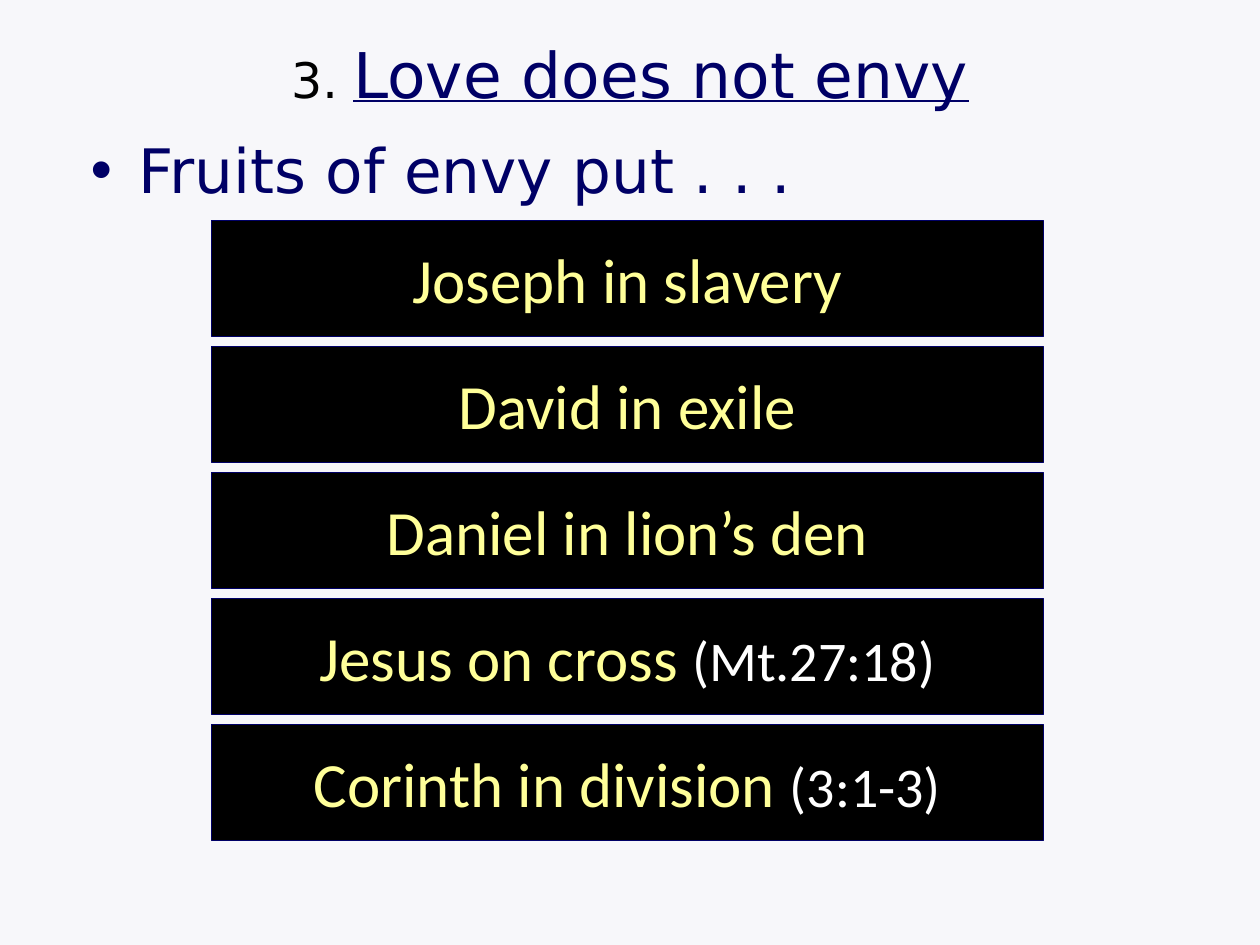
from lxml import etree
from pptx import Presentation
from pptx.dml.color import RGBColor
from pptx.enum.shapes import MSO_SHAPE
from pptx.enum.text import MSO_ANCHOR, PP_ALIGN
from pptx.oxml.ns import qn
from pptx.util import Inches, Pt

RECT = MSO_SHAPE.RECTANGLE
MIDDLE = MSO_ANCHOR.MIDDLE
CENTER, LEFT = PP_ALIGN.CENTER, PP_ALIGN.LEFT

COLORS = {"back": "F7F7FA", "navy": "000066", "black": "000000",
          "yellow": "FFFF99", "white": "FFFFFF"}
HEAD, BODY = "DejaVu Sans", "Calibri"

# Bars: one row per inch
BAR_X, BAR_Y, BAR_W, BAR_H, STEP = 1.68, 1.75, 6.6, 0.92, 1
FRUITS = [
    ("Joseph in slavery", ""),
    ("David in exile", ""),
    ("Daniel in lion’s den", ""),
    ("Jesus on cross ", "(Mt.27:18)"),
    ("Corinth in division ", "(3:1-3)"),
]


def color(name):
    return RGBColor.from_string(COLORS[name])


def add_run(para, text, size, face, tint, under=None):
    run = para.add_run()
    run.text = text
    font = run.font
    font.size, font.name, font.underline = Pt(size), face, under
    font.color.rgb = color(tint)


def set_title(slide):
    title = slide.shapes.title
    title.left, title.top = Inches(0.75), Inches(0.08)
    title.width, title.height = Inches(8.5), Inches(1)
    frame = title.text_frame
    frame.vertical_anchor = MIDDLE
    para = frame.paragraphs[0]
    para.alignment = CENTER
    add_run(para, "3. ", 28, HEAD, "black")
    add_run(para, "Love does not envy", 36, HEAD, "navy", True)


def add_point(slide, text):
    box = slide.shapes.add_textbox(Inches(0.62), Inches(1),
                                   Inches(8.75), Inches(6.08))
    frame = box.text_frame
    frame.word_wrap = True
    para = frame.paragraphs[0]
    para.alignment = LEFT
    para.space_after = Pt(12)
    # Hanging bullet
    props = para._p.get_or_add_pPr()
    props.set("marL", str(Inches(0.38)))
    props.set("indent", str(-Inches(0.38)))
    etree.SubElement(props, qn("a:buFont")).set("typeface", "Arial")
    etree.SubElement(props, qn("a:buChar")).set("char", "•")
    add_run(para, text, 35, HEAD, "navy")


def add_bar(slide, row, text, verse):
    bar = slide.shapes.add_shape(RECT, Inches(BAR_X), Inches(BAR_Y + row * STEP),
                                 Inches(BAR_W), Inches(BAR_H))
    bar.shadow.inherit = False
    bar.fill.solid()
    bar.fill.fore_color.rgb = color("black")
    bar.line.color.rgb = color("navy")
    bar.line.width = Pt(0.25)
    frame = bar.text_frame
    frame.vertical_anchor = MIDDLE
    para = frame.paragraphs[0]
    para.alignment = CENTER
    add_run(para, text, 36, BODY, "yellow")
    if verse:
        add_run(para, verse, 32, BODY, "white")


def main():
    deck = Presentation()
    deck.slide_width, deck.slide_height = Inches(10), Inches(7.5)
    slide = deck.slides.add_slide(deck.slide_layouts[5])
    slide.background.fill.solid()
    slide.background.fill.fore_color.rgb = color("back")

    set_title(slide)
    add_point(slide, "Fruits of envy put . . .")
    for row, (text, verse) in enumerate(FRUITS):
        add_bar(slide, row, text, verse)
    deck.save("out.pptx")


if __name__ == "__main__":
    main()
